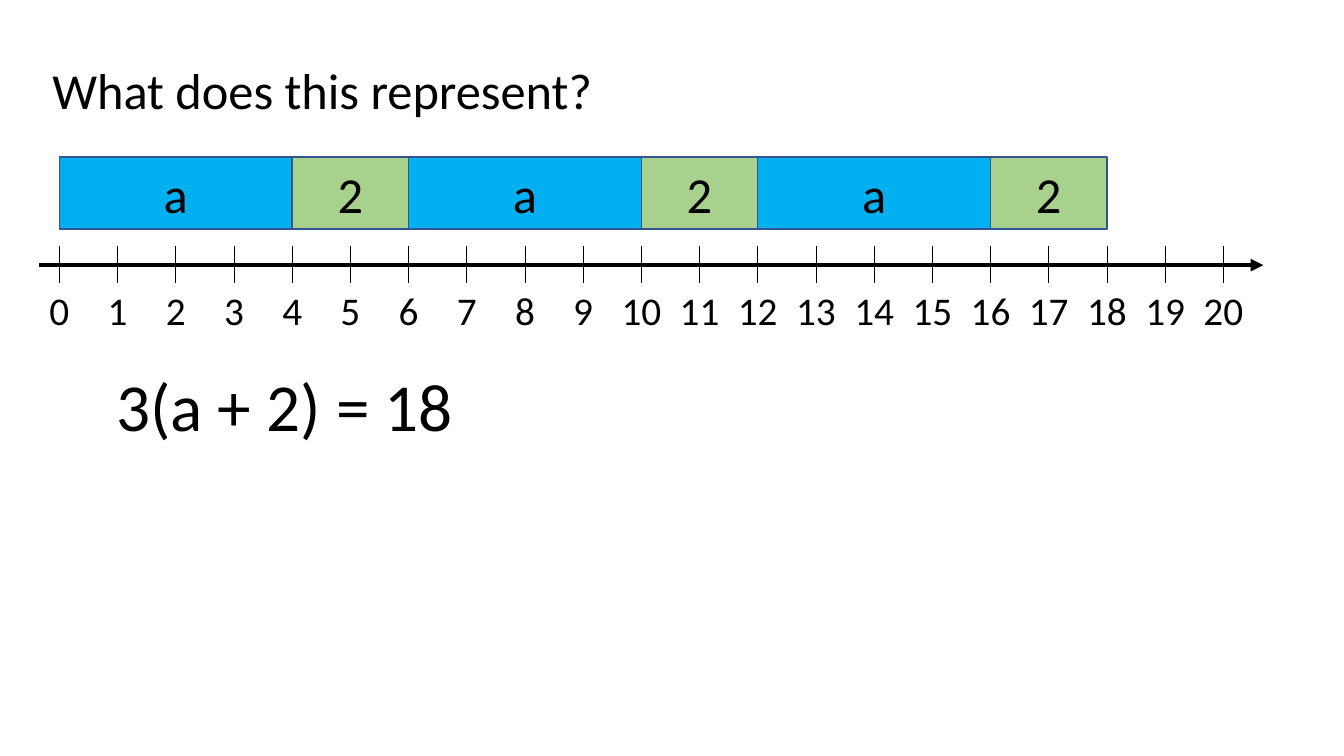
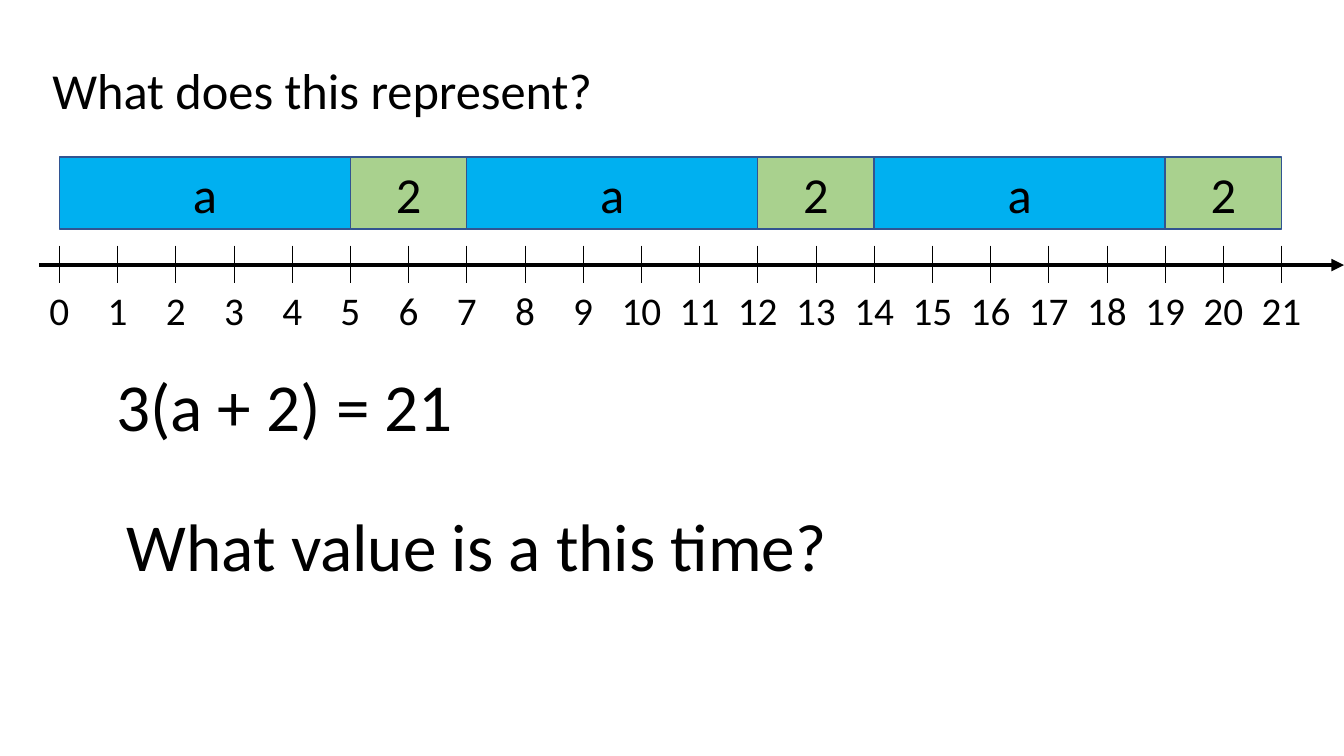
"""Build two slides that show an equation as blocks above a number line."""
from dataclasses import dataclass

from lxml import etree
from pptx import Presentation
from pptx.dml.color import RGBColor
from pptx.enum.shapes import MSO_CONNECTOR, MSO_SHAPE
from pptx.enum.text import MSO_ANCHOR, MSO_AUTO_SIZE, PP_ALIGN
from pptx.oxml.ns import qn
from pptx.util import Inches, Pt

STRAIGHT = MSO_CONNECTOR.STRAIGHT
RECT = MSO_SHAPE.RECTANGLE
MIDDLE = MSO_ANCHOR.MIDDLE
GROW = MSO_AUTO_SIZE.SHAPE_TO_FIT_TEXT
LEFT, CENTER = PP_ALIGN.LEFT, PP_ALIGN.CENTER


@dataclass(frozen=True)
class Theme:
    font: str = "Calibri"
    ink: str = "000000"
    outline: str = "325491"
    unknown: str = "00B0F0"
    constant: str = "A9D18E"
    label_size: int = 28
    title_size: int = 36
    body_size: int = 48
    tick_width: float = 0.5
    block_width: float = 1
    axis_width: float = 3


class Deck:
    ZERO, STEP = 4.42, 4.33
    AXIS_LEFT, AXIS_Y = 2.93, 35.07
    TICK_TOP, TICK_BOTTOM = 32.5, 37.4
    LABEL_TOP, LABEL_WIDTH, LABEL_HEIGHT = 37.2, 4.6, 7.6
    BLOCK_TOP, BLOCK_HEIGHT = 20.8, 9.5

    def __init__(self, theme):
        self.theme = theme
        self.prs = Presentation()
        self.prs.slide_width, self.prs.slide_height = Inches(13.33), Inches(7.5)
        self.s = None

    def x(self, percent):
        return round(self.prs.slide_width * percent / 100)

    def y(self, percent):
        return round(self.prs.slide_height * percent / 100)

    def box(self, left, top, width, height):
        return self.x(left), self.y(top), self.x(width), self.y(height)

    def at_value(self, value):
        return self.ZERO + self.STEP * value

    def slide(self):
        self.s = self.prs.slides.add_slide(self.prs.slide_layouts[6])

    def fill_text(self, tf, text, size, align):
        p = tf.paragraphs[0]
        p.alignment = align
        r = p.add_run()
        r.text = text
        style = {"name": self.theme.font, "size": Pt(size)}
        for name, value in style.items():
            setattr(r.font, name, value)
        r.font.color.rgb = RGBColor.from_string(self.theme.ink)

    def text(self, text, box, size, align=LEFT):
        tf = self.s.shapes.add_textbox(*self.box(*box)).text_frame
        for name, value in {"word_wrap": True, "auto_size": GROW}.items():
            setattr(tf, name, value)
        self.fill_text(tf, text, size, align)

    def line(self, start, end, width, arrow=False):
        c = self.s.shapes.add_connector(
            STRAIGHT, self.x(start[0]), self.y(start[1]), self.x(end[0]), self.y(end[1]))
        c.line.color.rgb = RGBColor.from_string(self.theme.ink)
        c.line.width = Pt(width)
        props = c.element.spPr
        if arrow:
            etree.SubElement(props.find(qn("a:ln")), qn("a:tailEnd"), type="triangle")
        etree.SubElement(props, qn("a:effectLst"))

    def block(self, text, start, length, fill):
        sp = self.s.shapes.add_shape(RECT, *self.box(
            self.at_value(start), self.BLOCK_TOP, self.STEP * length, self.BLOCK_HEIGHT))
        sp.shadow.inherit = False
        sp.fill.solid()
        sp.fill.fore_color.rgb = RGBColor.from_string(fill)
        sp.line.color.rgb = RGBColor.from_string(self.theme.outline)
        sp.line.width = Pt(self.theme.block_width)
        sp.text_frame.vertical_anchor = MIDDLE
        self.fill_text(sp.text_frame, text, self.theme.title_size, CENTER)

    def number_line(self, last, right):
        self.line((self.AXIS_LEFT, self.AXIS_Y), (right, self.AXIS_Y),
                  self.theme.axis_width, arrow=True)
        for value in range(last + 1):
            x = self.at_value(value)
            self.line((x, self.TICK_TOP), (x, self.TICK_BOTTOM), self.theme.tick_width)
            self.text(str(value), (x - self.LABEL_WIDTH / 2, self.LABEL_TOP,
                                   self.LABEL_WIDTH, self.LABEL_HEIGHT),
                      self.theme.label_size, CENTER)

    def bar(self, unknown, constant=2, repeats=3):
        for i in range(repeats):
            start = i * (unknown + constant)
            self.block("a", start, unknown, self.theme.unknown)
            self.block(str(constant), start + unknown, constant, self.theme.constant)

    def equation_slide(self, unknown, last, right, equation):
        self.slide()
        self.text("What does this represent?", (3.15, 7.2, 79.4, 9.5), self.theme.title_size)
        self.number_line(last, right)
        self.bar(unknown)
        self.text(equation, (7.9, 47.5, 43.7, 12.1), self.theme.body_size)


def main():
    deck = Deck(Theme())
    deck.equation_slide(4, 20, 94, "3(a + 2) = 18")
    deck.equation_slide(5, 21, 100, "3(a + 2) = 21")
    deck.text("What value is a this time?", (8.7, 66, 58.6, 12.1), deck.theme.body_size)
    deck.prs.save("out.pptx")


if __name__ == "__main__":
    main()
